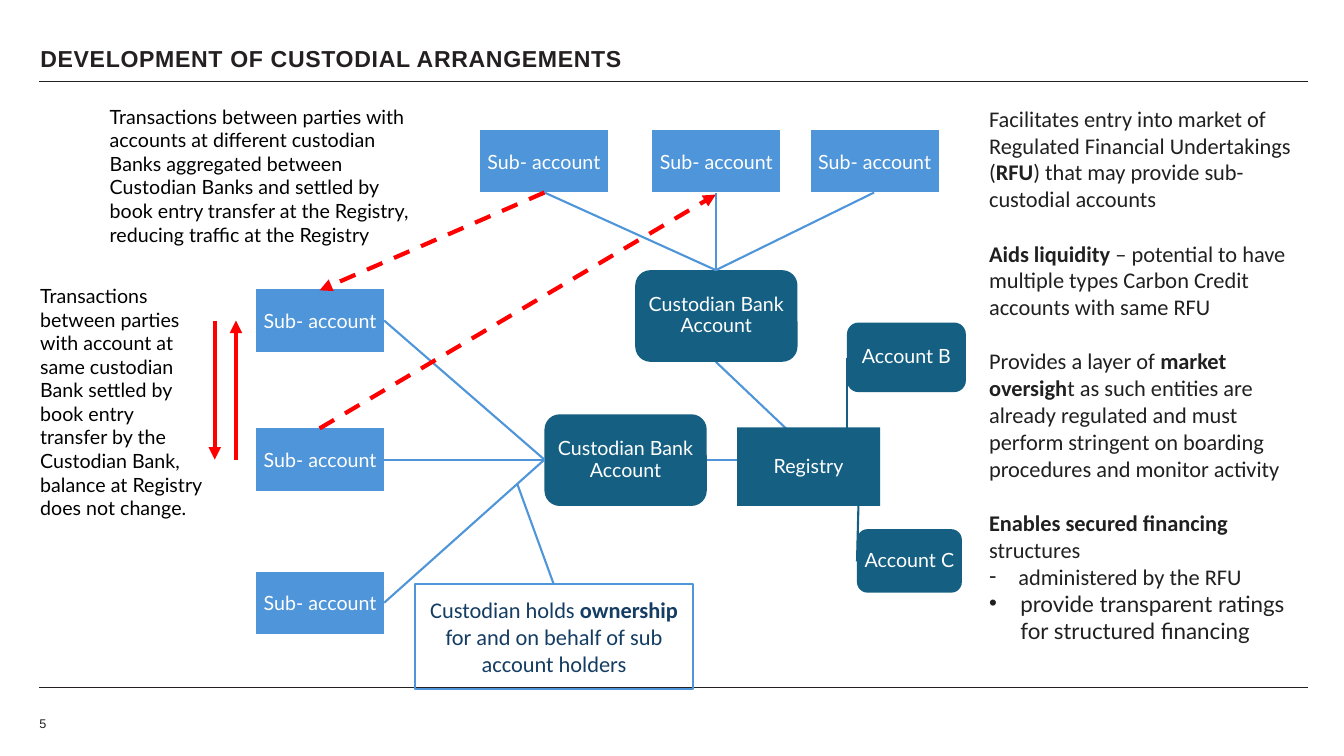
"""Builds the slide on the development of custodial arrangements."""
from lxml import etree
from pptx import Presentation
from pptx.dml.color import RGBColor
from pptx.enum import dml, shapes, text
from pptx.oxml import ns
from pptx.util import Inches, Pt

INK, BODY_INK, NAVY = "241F21", "202020", "153D63"
BLUE, TEAL, RED, WHITE, BLACK = "4E95D9", "156082", "FF0000", "FFFFFF", "000000"
color = RGBColor.from_string


def write(paragraph, runs, size, font, ink):
    for wording, bold in runs:
        run = paragraph.add_run()
        run.text = wording
        run.font.size = Pt(size)
        run.font.name = font
        run.font.bold = bold
        run.font.color.rgb = color(ink)


def link(x1, y1, x2, y2, ink, width, arrow=False, dashed=False):
    connector = slide.shapes.add_connector(
        shapes.MSO_CONNECTOR.STRAIGHT, Inches(x1), Inches(y1), Inches(x2), Inches(y2))
    connector.line.color.rgb = color(ink)
    connector.line.width = Pt(width)
    if dashed:
        connector.line.dash_style = dml.MSO_LINE.DASH
    if arrow:
        etree.SubElement(connector.line._get_or_add_ln(), ns.qn("a:tailEnd"), type="triangle")
    etree.SubElement(connector._element.spPr, ns.qn("a:effectLst"))


deck = Presentation()
deck.slide_width, deck.slide_height = Inches(13.33), Inches(7.5)
slide = deck.slides.add_slide(deck.slide_layouts[1])

for rule_y in (0.81, 6.82):
    link(0.39, rule_y, 12.97, rule_y, INK, 1)

heading = slide.shapes.title
heading.left, heading.top, heading.width, heading.height = map(Inches, (0.3, 0.47, 11.5, 0.3))
heading.text_frame.vertical_anchor = text.MSO_ANCHOR.TOP
heading.text_frame.auto_size = text.MSO_AUTO_SIZE.NONE
heading_line = heading.text_frame.paragraphs[0]
heading_line.alignment = text.PP_ALIGN.LEFT
heading_line.line_spacing = 0.7
write(heading_line, [("DEVELOPMENT OF CUSTODIAL ARRANGEMENTS", True)], 16.5, "Arial", INK)
heading_line.runs[0]._r.get_or_add_rPr().set("spc", "50")

benefits = slide.placeholders[1]
benefits.left, benefits.top, benefits.width, benefits.height = map(Inches, (9.71, 0.99, 3.27, 5.49))
benefits.text_frame.auto_size = text.MSO_AUTO_SIZE.NONE
benefit_items = [
    (None, 0, 0, "Calibri", [
        ("Facilitates entry into market of Regulated Financial Undertakings (", False),
        ("RFU", True), (") that may provide sub-custodial accounts", False)]),
    (None, 0, 19.5, "Calibri", [
        ("Aids liquidity", True),
        (" – potential to have multiple types Carbon Credit accounts with same RFU", False)]),
    (None, 0, 19.5, "Calibri", [
        ("Provides a layer of ", False), ("market oversigh", True),
        ("t as such entities are already regulated and must perform stringent "
         "on boarding procedures and monitor activity", False)]),
    (None, 0, 19.5, "Calibri", [("Enables secured financing", True), (" structures", False)]),
    ("-", 0.29, 0, "Calibri", [("administered by the RFU", False)]),
    ("•", 0.31, 0, "Lato", [("provide transparent ratings for structured financing", False)]),
]
for index, (bullet, indent, gap, font, runs) in enumerate(benefit_items):
    frame = benefits.text_frame
    item = frame.add_paragraph() if index else frame.paragraphs[0]
    properties = item._p.get_or_add_pPr()
    properties.set("marL", str(Inches(indent)))
    properties.set("indent", str(-Inches(indent)))
    if bullet:
        etree.SubElement(properties, ns.qn("a:buChar"), char=bullet)
    else:
        etree.SubElement(properties, ns.qn("a:buNone"))
    item.space_before = Pt(gap)
    write(item, runs, 16, font, BODY_INK)

for bank_x, bank_y, registry_x, registry_y in ((7.1, 3.59, 7.89, 4.34), (6.99, 4.56, 7.39, 4.56)):
    link(bank_x, bank_y, registry_x, registry_y, BLUE, 1.5)

RECT, ROUND = shapes.MSO_SHAPE.RECTANGLE, shapes.MSO_SHAPE.ROUNDED_RECTANGLE
nodes = [("Registry", RECT, 7.31, 4.24, 1.42, 0.78),
         ("Account B", ROUND, 8.4, 3.2, 1.18, 0.69),
         ("Account C", ROUND, 8.5, 5.25, 1.04, 0.63),
         ("Custodian Bank Account", ROUND, 6.3, 2.68, 1.61, 0.91),
         ("Custodian Bank Account", ROUND, 5.4, 4.11, 1.61, 0.91)]
sub_places = [(2.53, 2.86), (2.53, 4.24), (2.53, 5.66), (4.75, 1.28), (6.46, 1.28), (8.03, 1.28)]
nodes += [("Sub- account", RECT, x, y, 1.29, 0.64) for x, y in sub_places]
for label, outline, *place in nodes:
    is_sub = label == "Sub- account"
    node = slide.shapes.add_shape(outline, *map(Inches, place))
    node.shadow.inherit = False
    node.fill.solid()
    node.fill.fore_color.rgb = color(BLUE if is_sub else TEAL)
    if is_sub:
        node.line.color.rgb = color(WHITE)
        node.line.width = Pt(1.5)
    else:
        node.line.fill.background()
    frame = node.text_frame
    frame.word_wrap = True
    frame.vertical_anchor = text.MSO_ANCHOR.MIDDLE
    frame.margin_left = frame.margin_right = frame.margin_top = frame.margin_bottom = Inches(0.01)
    caption = frame.paragraphs[0]
    caption.alignment = text.PP_ALIGN.CENTER
    caption.line_spacing = 1.0 if is_sub else 0.9
    write(caption, [(label, False)], 14, "Lato", WHITE)

for sub_y in (3.18, 4.56, 5.98):
    link(5.4, 4.56, 3.81, sub_y, BLUE, 1.5)
for sub_x in (5.4, 7.1, 8.67):
    link(7.1, 2.68, sub_x, 1.91, BLUE, 1.5)
link(8.4, 3.55, 8.4, 4.59, TEAL, 1.5)
link(8.5, 5.57, 8.52, 4.8, TEAL, 1.5)

link(5.4, 1.91, 3.17, 2.88, RED, 3, arrow=True, dashed=True)
link(3.17, 4.25, 7.1, 1.93, RED, 3, arrow=True, dashed=True)
link(2.13, 3.18, 2.13, 4.56, RED, 3, arrow=True)
link(2.34, 4.56, 2.34, 3.18, RED, 3, arrow=True)

notes = [
    ((0.3, 2.77, 1.82, 2.46),
     "Transactions between parties with account at same custodian Bank settled by book entry "
     "transfer by the Custodian Bank, balance at Registry does not change."),
    ((0.99, 0.99, 3.17, 1.51),
     "Transactions between parties with accounts at different custodian Banks aggregated between "
     "Custodian Banks and settled by book entry transfer at the Registry, reducing traffic at the "
     "Registry"),
]
for place, wording in notes:
    note = slide.shapes.add_textbox(*map(Inches, place))
    note.text_frame.word_wrap = True
    write(note.text_frame.paragraphs[0], [(wording, False)], 14, "Lato", BLACK)

ownership = slide.shapes.add_shape(RECT, *map(Inches, (4.12, 5.79, 2.75, 1.05)))
ownership.shadow.inherit = False
ownership.fill.background()
ownership.line.color.rgb = color(BLUE)
ownership.line.width = Pt(1.5)
ownership.text_frame.word_wrap = True
ownership.text_frame.vertical_anchor = text.MSO_ANCHOR.MIDDLE
ownership_line = ownership.text_frame.paragraphs[0]
ownership_line.alignment = text.PP_ALIGN.CENTER
write(ownership_line, [("Custodian holds ", False), ("ownership", True),
                       (" for and on behalf of sub account holders", False)], 16, "Calibri", NAVY)
link(5.13, 4.8, 5.49, 5.79, BLUE, 1.5)

page = slide.shapes.add_textbox(*map(Inches, (0.39, 7.08, 0.39, 0.2)))
frame = page.text_frame
frame.word_wrap = True
frame.vertical_anchor = text.MSO_ANCHOR.MIDDLE
frame.margin_left = frame.margin_right = frame.margin_top = frame.margin_bottom = 0
write(frame.paragraphs[0], [("5", False)], 9, "Arial", INK)

deck.save("out.pptx")
